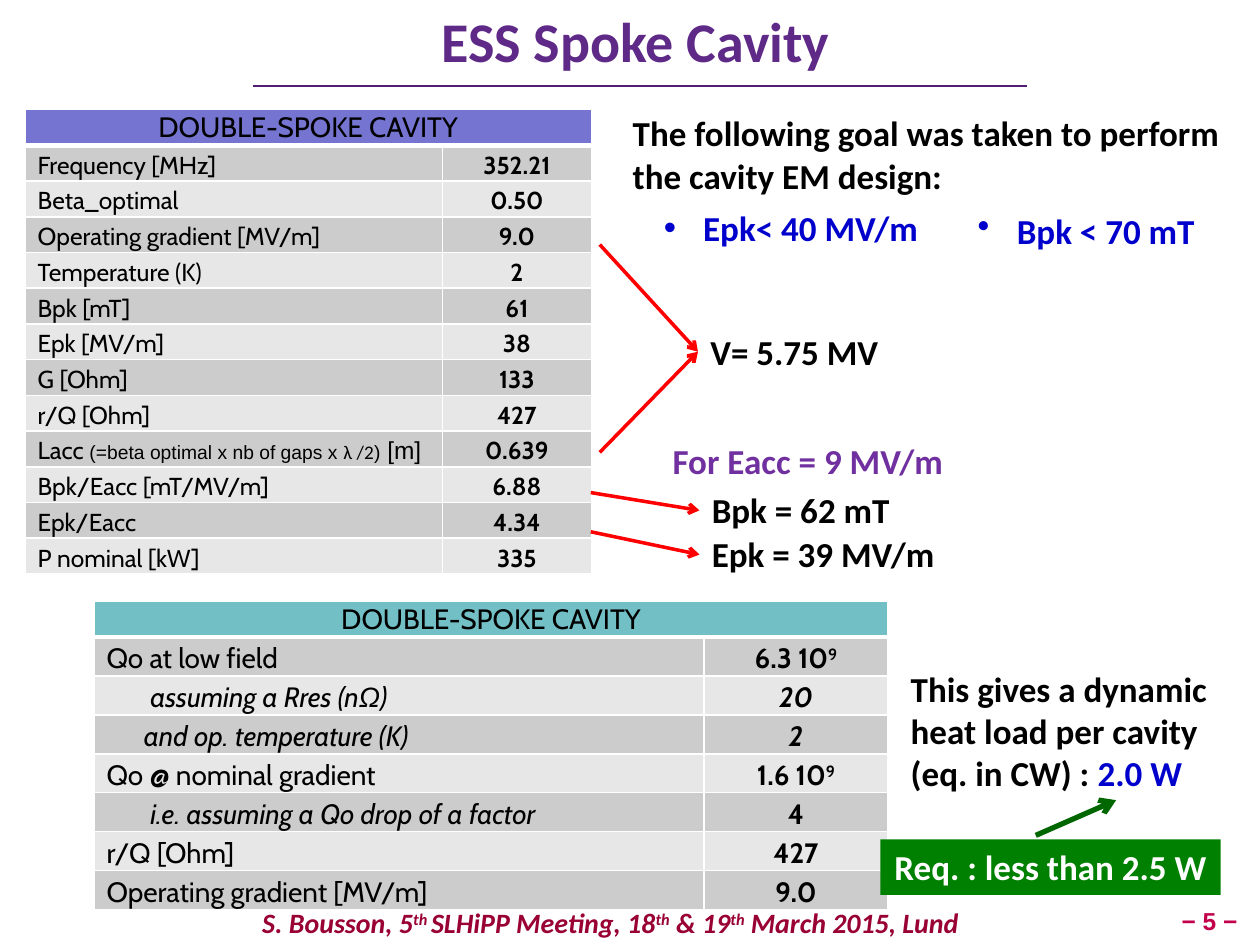
from pptx import Presentation
from pptx.dml.color import RGBColor
from pptx.enum.shapes import MSO_CONNECTOR, MSO_SHAPE
from pptx.enum.text import MSO_ANCHOR, MSO_AUTO_SIZE, PP_ALIGN
from pptx.oxml.ns import qn
from pptx.util import Cm, Pt
from lxml import etree

LEFT, CENTER, RIGHT = PP_ALIGN.LEFT, PP_ALIGN.CENTER, PP_ALIGN.RIGHT
TOP, MIDDLE = MSO_ANCHOR.TOP, MSO_ANCHOR.MIDDLE
STRAIGHT, RECTANGLE = MSO_CONNECTOR.STRAIGHT, MSO_SHAPE.RECTANGLE
NO_AUTOFIT = MSO_AUTO_SIZE.NONE

BLACK, WHITE, RED, BLUE = "000000", "FFFFFF", "FF0000", "0000CC"
PURPLE, VIOLET, CRIMSON = "5F2987", "7030A0", "990033"
ROW_FILLS = ("CCCCCC", "E7E7E7")


def rgb(code):
    return RGBColor.from_string(code)


def write(para, text, size=20, font="Calibri", color=BLACK, bold=True,
          italic=False, raised=False):
    span = para.add_run()
    span.text = text
    span.font.size, span.font.name = Pt(size), font
    span.font.bold, span.font.italic = bold, italic
    span.font.color.rgb = rgb(color)
    if raised:
        span.font._element.set("baseline", "30000")


def write_spans(para, content, **style):
    """Write a plain string, or a list of (text, overrides) pairs."""
    spans = [(content, {})] if isinstance(content, str) else content
    for text, overrides in spans:
        write(para, text, **{**style, **overrides})


def set_indent(para, margin=0, hanging=0, bullet=None):
    properties = para._p.get_or_add_pPr()
    properties.set("marL", str(Cm(margin)))
    properties.set("indent", str(-Cm(hanging)))
    if bullet:
        etree.SubElement(properties, qn("a:buChar")).set("char", bullet)
    else:
        etree.SubElement(properties, qn("a:buNone"))


def set_borders(cell, bottom=1):
    properties = cell._tc.get_or_add_tcPr()
    sides = (("a:lnL", 1), ("a:lnR", 1), ("a:lnT", 1), ("a:lnB", bottom))
    for position, (tag, width) in enumerate(sides):
        line = etree.Element(qn(tag), w=str(Pt(width)))
        fill = etree.SubElement(line, qn("a:solidFill"))
        etree.SubElement(fill, qn("a:srgbClr")).set("val", WHITE)
        properties.insert(position, line)


class SlideBuilder:
    def __init__(self, deck):
        self.slide = deck.slides.add_slide(deck.slide_layouts[1])
        self.shapes = self.slide.shapes

    def place(self, shape, left, top, width, height):
        shape.left, shape.top = Cm(left), Cm(top)
        shape.width, shape.height = Cm(width), Cm(height)
        frame = shape.text_frame
        frame.word_wrap, frame.auto_size = True, NO_AUTOFIT
        frame.vertical_anchor = TOP
        return frame

    def title(self, text, *area, **style):
        para = self.place(self.shapes.title, *area).paragraphs[0]
        para.alignment = CENTER
        write(para, text, **style)

    def body(self, lead, bullet, *area):
        frame = self.place(self.slide.placeholders[1], *area)
        para = frame.paragraphs[0]
        set_indent(para)
        para.space_before = Pt(0)
        write(para, lead)
        para = frame.add_paragraph()
        para.level = 1
        set_indent(para, 1.42, 0.79, "•")
        para.space_before = Pt(6)
        write(para, bullet, color=BLUE)

    def text(self, content, *area, align=LEFT, anchor=TOP, bullet=False,
             **style):
        frame = self.place(self.shapes.add_textbox(0, 0, 0, 0), *area)
        frame.vertical_anchor = anchor
        para = frame.paragraphs[0]
        para.alignment = align
        if bullet:
            set_indent(para, 0.79, 0.79, "•")
        write_spans(para, content, **style)

    def callout(self, text, *area, fill):
        shape = self.shapes.add_shape(RECTANGLE, 0, 0, 0, 0)
        shape.shadow.inherit = False
        shape.fill.solid()
        shape.fill.fore_color.rgb = rgb(fill)
        shape.line.fill.background()
        frame = self.place(shape, *area)
        frame.word_wrap = False
        frame.paragraphs[0].alignment = CENTER
        write(frame.paragraphs[0], text, color=WHITE)

    def line(self, *ends, color=RED, width=2, arrow=True):
        connector = self.shapes.add_connector(STRAIGHT, *map(Cm, ends))
        connector.line.color.rgb = rgb(color)
        connector.line.width = Pt(width)
        if arrow:
            outline = connector.line._get_or_add_ln()
            etree.SubElement(outline, qn("a:tailEnd")).set("type", "arrow")
        etree.SubElement(connector._element.spPr, qn("a:effectLst"))

    def cell(self, cell, content, fill, align, indent=0, bottom=1, **style):
        cell.fill.solid()
        cell.fill.fore_color.rgb = rgb(fill)
        set_borders(cell, bottom)
        cell.margin_top = cell.margin_bottom = 0
        cell.margin_left = Cm(0.25 + indent)
        cell.margin_right = Cm(0.25)
        cell.vertical_anchor = MIDDLE
        para = cell.text_frame.paragraphs[0]
        para.alignment = align
        if bottom == 1:
            para.line_spacing = 1.15
        write_spans(para, content, font="Cabin", **style)

    def table(self, rows, left, top, widths, row_height, header_fill, size):
        """Rows hold a label, a value and optionally indent and value italics."""
        header_height = 0.72
        height = header_height + row_height * len(rows)
        table = self.shapes.add_table(len(rows) + 1, 2, Cm(left), Cm(top),
                                      Cm(sum(widths)), Cm(height)).table
        table.first_row = table.horz_banding = False
        for column, width in zip(table.columns, widths):
            column.width = Cm(width)
        for row in table.rows:
            row.height = Cm(row_height)
        table.rows[0].height = Cm(header_height)
        table.cell(0, 0).merge(table.cell(0, 1))
        self.cell(table.cell(0, 0), "DOUBLE-SPOKE CAVITY", header_fill,
                  CENTER, bottom=3, size=16, bold=False)
        for number, (label, value, *extra) in enumerate(rows, 1):
            indent, slanted = extra or (0, False)
            fill = ROW_FILLS[(number - 1) % 2]
            self.cell(table.cell(number, 0), label, fill, LEFT, indent,
                      size=size, bold=False, italic=indent > 0)
            self.cell(table.cell(number, 1), value, fill, CENTER,
                      size=size, italic=slanted)


SMALL = {"size": 11, "font": "Arial"}
RAISED = {"raised": True}
DESIGN_ROWS = [
    ("Frequency [MHz]", "352.21"),
    ("Beta_optimal", "0.50"),
    ("Operating gradient [MV/m]", "9.0"),
    ("Temperature (K)", "2"),
    ("Bpk [mT]", "61"),
    ("Epk [MV/m]", "38"),
    ("G [Ohm]", "133"),
    ("r/Q [Ohm]", "427"),
    ([("Lacc ", {}), ("(=beta optimal x nb of gaps x ", SMALL),
      ("λ /2", {"size": 11, "font": "Calibri"}), (")", SMALL),
      (" [m]", {"font": "Arial"})], "0.639"),
    ("Bpk/Eacc [mT/MV/m]", "6.88"),
    ("Epk/Eacc", "4.34"),
    ("P nominal [kW]", "335"),
]
LOSS_ROWS = [
    ("Qo at low field", [("6.3 10", {}), ("9", RAISED)]),
    ([("assuming a Rres (n", {}), ("Ω", {"font": "Arial"}), (")", {})],
     "20", 0.88, True),
    ("and op. temperature (K)", "2", 0.75, True),
    ("Qo @ nominal gradient", [("1.6 10", {}), ("9", RAISED)]),
    ("i.e. assuming a Qo drop of a factor", "4", 0.88, False),
    ("r/Q [Ohm]", "427"),
    ("Operating gradient [MV/m]", "9.0"),
]
FOOTER = [
    ("S. Bousson, 5", {}), ("th ", RAISED), ("SLHiPP Meeting, 18", {}),
    ("th", RAISED), (" & 19", {}), ("th", RAISED),
    (" March 2015, Lund", {}),
]


def main():
    deck = Presentation()
    deck.slide_width, deck.slide_height = Cm(25.4), Cm(19.05)
    page = SlideBuilder(deck)

    page.title("ESS Spoke Cavity", 3.91, 0, 17.81, 1.52, size=32, color=PURPLE)
    page.line(5.11, 1.73, 20.7, 1.73, color="501F74", width=1.5, arrow=False)
    page.text("− 5 −", 22.71, 18.06, 2.49, 0.99, align=RIGHT, anchor=MIDDLE,
              size=14, font="Arial", color="C3004A")
    page.text(FOOTER, 1.7, 18.14, 21.21, 0.9, align=CENTER, size=16,
              color=CRIMSON, italic=True)

    page.body("The following goal was taken to perform the cavity EM design:",
              "Epk< 40 MV/m", 12.5, 2.13, 12.9, 3.02)
    page.text("Bpk < 70 mT", 19.46, 4.09, 5, 1.12, bullet=True, color=BLUE)

    page.table(DESIGN_ROWS, 0.51, 2.21, (8.41, 3), 0.72, "7575D1", 14)
    page.table(LOSS_ROWS, 1.9, 12.12, (12.29, 3.71), 0.78, "72BFC5", 16)

    page.text("V= 5.75 MV", 14.07, 6.53, 5, 1.12)
    page.text("For Eacc = 9 MV/m", 13.31, 8.74, 6.81, 1.12, color=VIOLET)
    page.text("Bpk = 62 mT", 14.1, 9.73, 5, 1.12)
    page.text("Epk = 39 MV/m", 14.1, 10.62, 6.6, 1.12)
    for start_y, end_y in ((4.93, 7.09), (9.12, 7.09)):
        page.line(12.09, start_y, 14.07, end_y)
    for start_y, end_y in ((9.93, 10.29), (10.72, 11.18)):
        page.line(11.91, start_y, 14.1, end_y)

    page.text([("This gives a dynamic heat load per cavity (eq. in CW) : ", {}),
               ("2.0 W", {"color": BLUE})], 18.11, 13.34, 6.81, 2.82)
    page.callout("Req. : less than 2.5 W", 17.75, 16.92, 6.86, 1.12,
                 fill="008000")
    page.line(20.88, 16.84, 22.5, 16.13, color="006600", width=3)
    deck.save("out.pptx")


if __name__ == "__main__":
    main()
